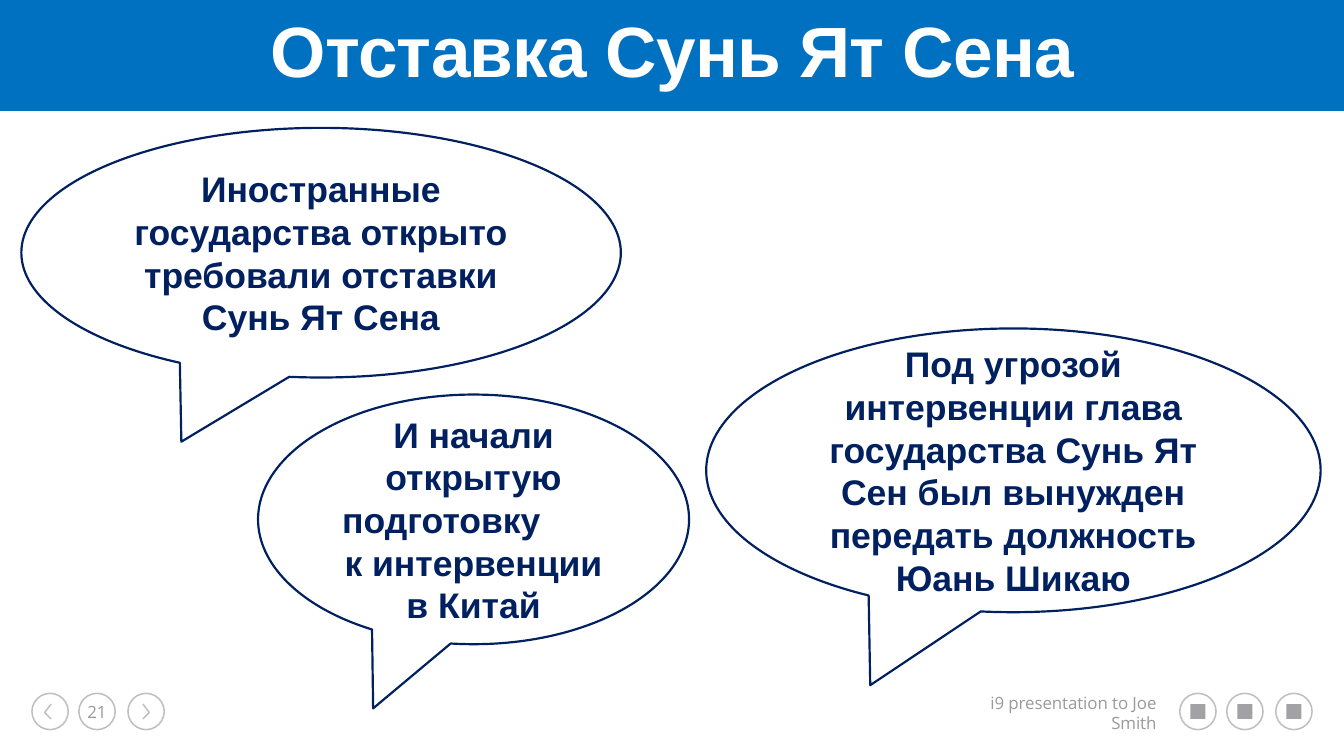
import pptx
import pptx.util
import pptx.dml.color
import pptx.enum.shapes
import pptx.enum.text

Inches, Pt = pptx.util.Inches, pptx.util.Pt
KIND = pptx.enum.shapes.MSO_SHAPE
ALIGN = pptx.enum.text.PP_ALIGN
MIDDLE = pptx.enum.text.MSO_ANCHOR.MIDDLE

COLORS = {
    "blue": "0070C0",
    "navy": "002060",
    "white": "FFFFFF",
    "gray": "9A9A9B",
    "ring": "BFBFBF",
    "icon": "A2A2A4",
}
FOOT_Y, RING = 3.25, 0.17


def color(name):
    return pptx.dml.color.RGBColor.from_string(COLORS[name])


def style(shape, fill=None, line=None, width=0.5):
    shape.shadow.inherit = False
    if fill:
        shape.fill.solid()
        shape.fill.fore_color.rgb = color(fill)
    else:
        shape.fill.background()
    if line:
        shape.line.color.rgb = color(line)
        shape.line.width = Pt(width)
    else:
        shape.line.fill.background()


def add_run(par, text, font, size, ink, bold=False):
    run = par.add_run()
    run.text = text
    run.font.name = font
    run.font.size = Pt(size)
    run.font.bold = bold
    run.font.color.rgb = color(ink)
    return run


def set_frame(shape, side, top, wrap=True):
    frame = shape.text_frame
    frame.auto_size = pptx.enum.text.MSO_AUTO_SIZE.NONE
    frame.word_wrap = wrap
    frame.vertical_anchor = MIDDLE
    frame.margin_left = frame.margin_right = Inches(side)
    frame.margin_top = frame.margin_bottom = Inches(top)
    return frame


def add_title(slide, text):
    title = slide.shapes.title
    title.left, title.top = Inches(0), Inches(0)
    title.width, title.height = Inches(6.3), Inches(0.52)
    title.fill.solid()
    title.fill.fore_color.rgb = color("blue")
    par = set_frame(title, 0, 0).paragraphs[0]
    par.alignment = ALIGN.CENTER
    par.line_spacing = 0.86
    run = add_run(par, text, "Arial", 24, "white", True)
    run.font._element.set("spc", "-25")


def add_bubble(slide, box, parts):
    bubble = slide.shapes.add_shape(
        KIND.OVAL_CALLOUT, *[Inches(v) for v in box])
    bubble.adjustments[0] = -0.233
    bubble.adjustments[1] = 0.757
    style(bubble, "white", "navy", 0.75)
    frame = set_frame(bubble, 0.1, 0.05)
    for i, (text, align) in enumerate(parts):
        par = frame.add_paragraph() if i else frame.paragraphs[0]
        par.alignment = align
        add_run(par, text, "Arial", 12, "navy", True)


def add_ring(slide, left):
    ring = slide.shapes.add_shape(
        KIND.OVAL, Inches(left), Inches(FOOT_Y), Inches(RING), Inches(RING))
    style(ring, line="ring")
    return ring


def add_arrow(slide, back, tip):
    points = [(back, 3.3), (tip, 3.34), (back, 3.37)]
    points = [(Inches(x), Inches(y)) for x, y in points]
    pen = slide.shapes.build_freeform(*points[0])
    pen.add_line_segments(points[1:], close=False)
    style(pen.convert_to_shape(), line="ring")


def add_icon(slide, left):
    add_ring(slide, left)
    size = 0.07
    gap = (RING - size) / 2
    icon = slide.shapes.add_shape(
        KIND.RECTANGLE, Inches(left + gap), Inches(FOOT_Y + gap),
        Inches(size), Inches(size))
    style(icon, "icon")


def add_footer(slide):
    # Page number between two arrows
    for left in (0.15, 0.37, 0.6):
        add_ring(slide, left)
    add_arrow(slide, 0.24, 0.21)
    add_arrow(slide, 0.67, 0.7)

    # Page number and caption
    for text, box, align, wrap in (
            ("21", (0.42, 3.25, 0.07, 0.17), ALIGN.CENTER, False),
            ("i9 presentation to Joe Smith", (4.36, 3.26, 1.12, 0.16),
             ALIGN.RIGHT, True)):
        note = slide.shapes.add_textbox(*[Inches(v) for v in box])
        par = set_frame(note, 0.06, 0.03, wrap).paragraphs[0]
        par.alignment = align
        add_run(par, text, "Open Sans", 5.7, "gray")

    # Plain marks for the contact links
    for left in (5.53, 5.75, 5.98):
        add_icon(slide, left)


def main():
    # Page of 16 by 9 centimetres
    deck = pptx.Presentation()
    deck.slide_width = pptx.util.Cm(16)
    deck.slide_height = pptx.util.Cm(9)
    slide = deck.slides.add_slide(deck.slide_layouts[5])

    add_footer(slide)
    add_title(slide, "Отставка Сунь Ят Сена")

    # Speech bubbles
    add_bubble(slide, (0.1, 0.6, 2.81, 1.17), [
        ("Иностранные государства открыто требовали отставки Сунь Ят Сена",
         ALIGN.CENTER)])
    add_bubble(slide, (1.21, 1.85, 2.02, 1.17), [
        ("И начали открытую", ALIGN.CENTER),
        ("подготовку", ALIGN.LEFT),
        ("к интервенции в Китай", ALIGN.CENTER)])
    add_bubble(slide, (3.31, 1.54, 2.88, 1.33), [
        ("Под угрозой интервенции глава государства Сунь Ят Сен "
         "был вынужден передать должность Юань Шикаю", ALIGN.CENTER)])

    deck.save("out.pptx")


if __name__ == "__main__":
    main()
